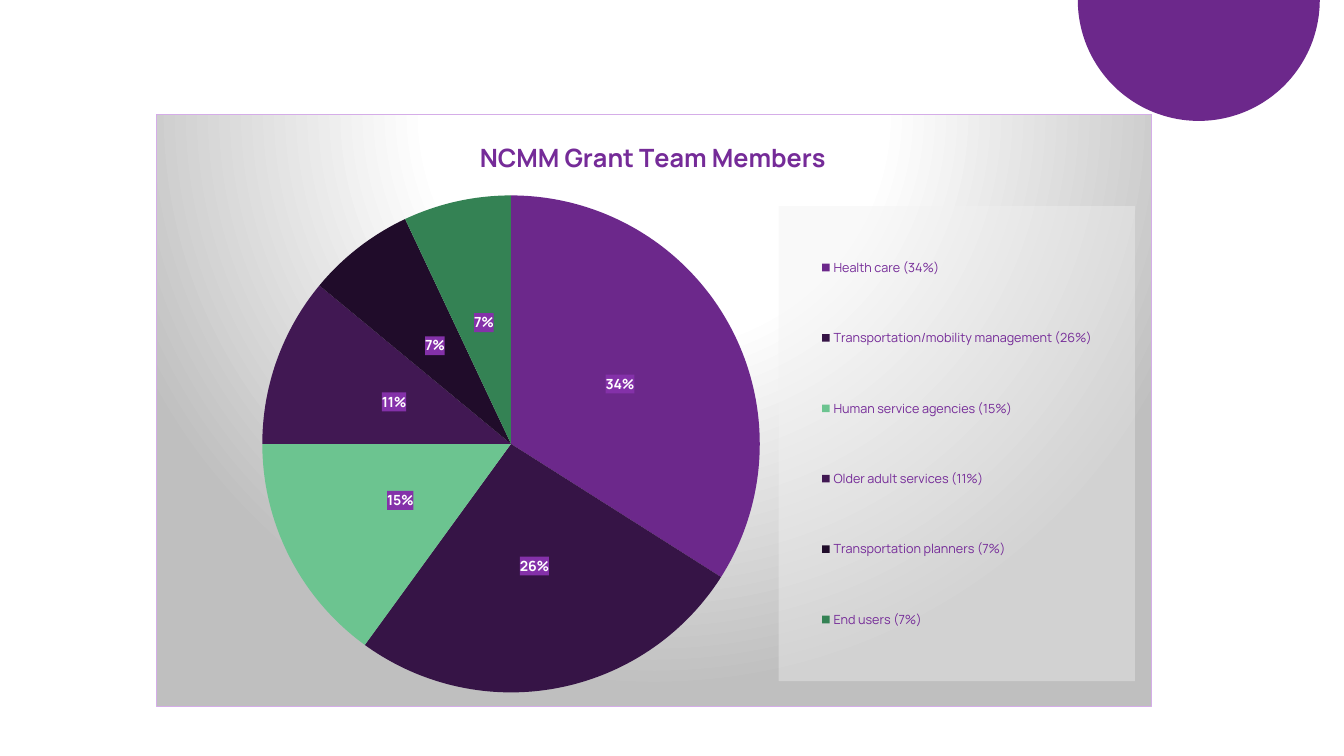
import math

from lxml import etree
from pptx import Presentation
from pptx.chart.data import CategoryChartData
from pptx.dml.color import RGBColor
from pptx.enum import chart as ch
from pptx.oxml import parse_xml
from pptx.oxml.ns import nsdecls, qn
from pptx.util import Inches, Pt

FONT = "Manrope"
PURPLE = "6C288B"
TEXT_PURPLE = "752B98"
MEMBERS = [
    ("Health care", 34, PURPLE),
    ("Transportation/mobility management", 26, "361446"),
    ("Human service agencies", 15, "6CC490"),
    ("Older adult services", 11, "411853"),
    ("Transportation planners", 7, "200C2A"),
    ("End users", 7, "348254"),
]
PANEL_FILL = (
    '<a:gradFill><a:gsLst>'
    '<a:gs pos="0"><a:srgbClr val="FFFFFF"/></a:gs>'
    '<a:gs pos="39000"><a:srgbClr val="FFFFFF"/></a:gs>'
    '<a:gs pos="100000"><a:srgbClr val="BFBFBF"/></a:gs>'
    '</a:gsLst><a:path path="circle">'
    '<a:fillToRect l="50000" t="-80000" r="50000" b="180000"/>'
    '</a:path></a:gradFill>'
    '<a:ln w="9525"><a:solidFill><a:srgbClr val="D5ADE8"/></a:solidFill></a:ln>'
)


def rgb(value):
    return RGBColor.from_string(value)


def solid(value, alpha=100):
    return (f'<a:solidFill><a:srgbClr val="{value}">'
            f'<a:alpha val="{alpha * 1000}"/></a:srgbClr></a:solidFill>')


def style_font(font, size, color, bold=False):
    font.name = FONT
    font.size = Pt(size)
    font.bold = bold
    font.color.rgb = rgb(color)


def set_look(parent, before, content):
    """Put a shape-properties element ahead of the first child named in before."""
    look = parse_xml(f'<c:spPr {nsdecls("c", "a")}>{content}</c:spPr>')
    next(child for child in parent if child.tag == qn(before)).addprevious(look)


def set_layout(parent, after, x, y, w=None, h=None, inner=False):
    """Place a chart part by fractions of the chart's size."""
    for old in parent.findall(qn("c:layout")):
        parent.remove(old)
    layout = parse_xml(f'<c:layout {nsdecls("c")}><c:manualLayout/></c:layout>')
    manual = layout[0]
    settings = [("layoutTarget", "inner")] if inner else []
    settings += [("xMode", "edge"), ("yMode", "edge"), ("x", x), ("y", y)]
    if w is not None:
        settings += [("w", w), ("h", h)]
    for name, value in settings:
        etree.SubElement(manual, qn(f"c:{name}")).set("val", str(value))
    if after:
        parent.find(qn(after)).addnext(layout)
    else:
        parent.insert(0, layout)


def add_half_disc(page, center_x, radius, color, steps=90):
    """Draw the lower half of a disc hanging from the top edge."""
    points = [
        (Inches(center_x + radius * math.cos(math.pi * i / steps)),
         Inches(radius * math.sin(math.pi * i / steps)))
        for i in range(steps + 1)
    ]
    builder = page.shapes.build_freeform(*points[0])
    builder.add_line_segments(points[1:], close=True)
    disc = builder.convert_to_shape()
    disc.shadow.inherit = False
    disc.fill.solid()
    disc.fill.fore_color.rgb = rgb(color)
    disc.line.fill.background()


def add_title(chart, words):
    chart.has_title = True
    title = chart.chart_title
    title.include_in_layout = False
    span = title.text_frame.paragraphs[0].add_run()
    span.text = words
    style_font(span.font, 18, TEXT_PURPLE, bold=True)
    set_layout(title._element, "c:tx", 0.32, 0.03)


def add_legend(chart):
    chart.has_legend = True
    legend = chart.legend
    legend.position = ch.XL_LEGEND_POSITION.RIGHT
    legend.include_in_layout = False
    style_font(legend.font, 9, TEXT_PURPLE)
    set_layout(legend._element, "c:legendPos", 0.625, 0.155, 0.358, 0.803)
    set_look(legend._element, "c:txPr", solid("F2F2F2", 39))


def add_labels(series):
    labels = series.data_labels
    labels.show_percentage = True
    labels.show_value = False
    labels.number_format = "0%"
    labels.number_format_is_linked = False
    labels.position = ch.XL_LABEL_POSITION.CENTER
    style_font(labels.font, 10, "FFFFFF", bold=True)
    set_look(labels._element, "c:txPr", solid("8431A9"))


def add_member_pie(page):
    data = CategoryChartData()
    data.categories = [f"{name} ({share}%)" for name, share, _ in MEMBERS]
    for name in ("Series 1", "Series 2"):
        data.add_series(name, [share for _, share, _ in MEMBERS])
    frame = page.shapes.add_chart(
        ch.XL_CHART_TYPE.PIE, Inches(1.55), Inches(1.13),
        Inches(9.88), Inches(5.88), data)
    chart = frame.chart
    style_font(chart.font, 10, "361446")
    add_title(chart, "NCMM Grant Team Members")
    add_legend(chart)

    # Slices and their labels
    plot = chart.plots[0]
    plot.vary_by_categories = True
    series = plot.series[0]
    for i, (_, _, color) in enumerate(MEMBERS):
        point = series.points[i].format
        point.fill.solid()
        point.fill.fore_color.rgb = rgb(color)
        point.line.fill.background()
    add_labels(series)

    # A new pie holds one series; this adds the second in the same style
    chart.replace_data(data)

    # Pie placement and panel behind it
    space = chart._chartSpace
    plot_area = space.find(".//" + qn("c:plotArea"))
    set_layout(plot_area, None, 0.106, 0.137, 0.5, 0.84, inner=True)
    set_look(space, "c:txPr", PANEL_FILL)


def main():
    deck = Presentation()
    deck.slide_width = Inches(13.33)
    deck.slide_height = Inches(7.5)
    page = deck.slides.add_slide(deck.slide_layouts[6])
    add_half_disc(page, center_x=11.89, radius=1.2, color=PURPLE)
    add_member_pie(page)
    deck.save("out.pptx")


if __name__ == "__main__":
    main()
